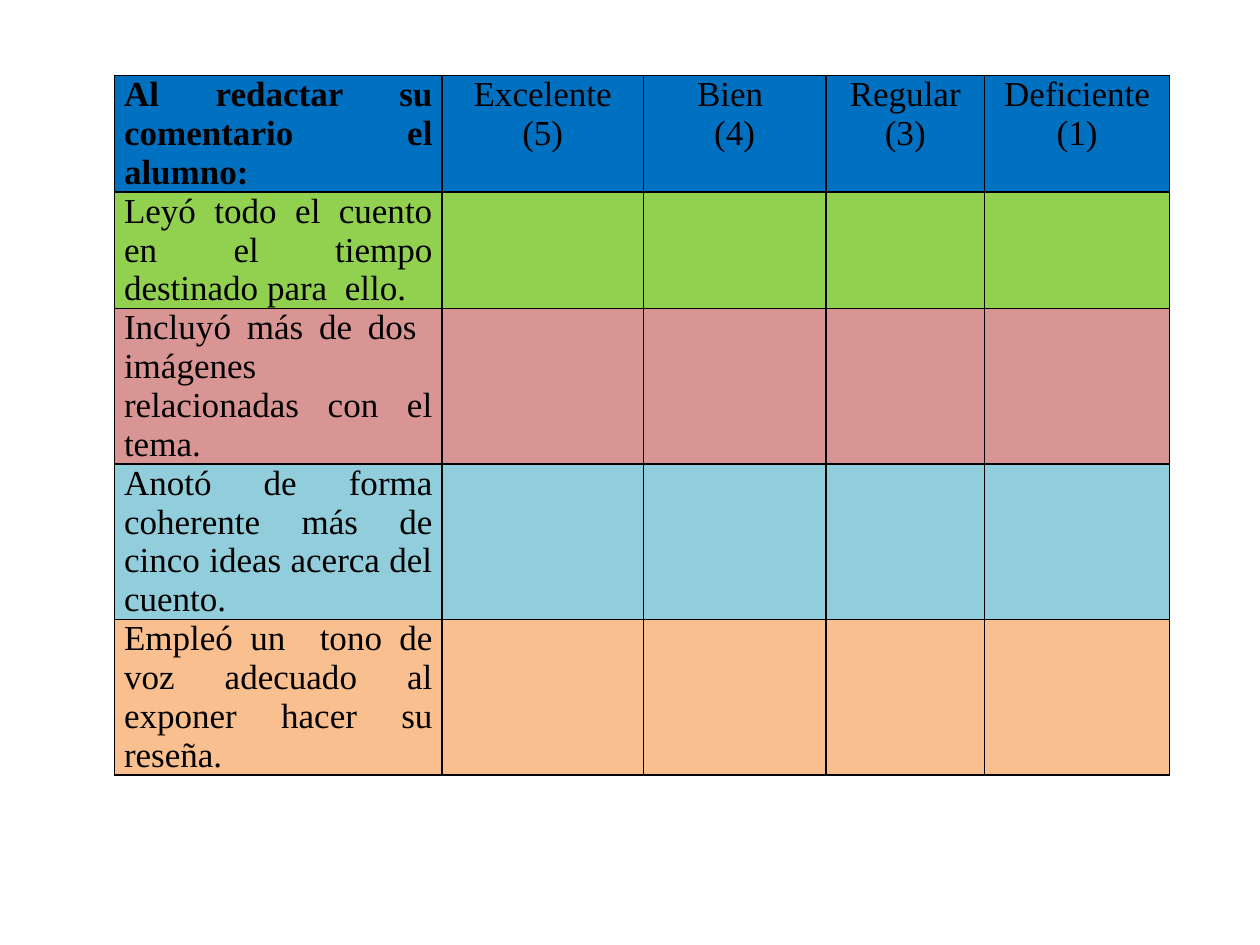
from lxml import etree
from pptx import Presentation
from pptx.dml.color import RGBColor
from pptx.enum.text import PP_ALIGN
from pptx.oxml.ns import qn
from pptx.util import Cm, Pt

CENTER, JUSTIFY = PP_ALIGN.CENTER, PP_ALIGN.JUSTIFY

# Content
HEADER = ["Al redactar su comentario el alumno:", "Excelente (5)",
          "Bien \n(4)", "Regular (3)", "Deficiente (1)"]
CRITERIA = [
    "Leyó todo el cuento en el tiempo destinado para  ello.",
    "Incluyó más de dos  imágenes  relacionadas con el tema.",
    "Anotó de forma coherente más de cinco ideas acerca del cuento.",
    "Empleó un  tono de voz adecuado al exponer hacer su reseña.",
]
ROWS = [HEADER] + [[text] + [""] * (len(HEADER) - 1) for text in CRITERIA]

# Style
COLORS = {"blue": "0070C0", "green": "92D050", "rose": "D99594",
          "aqua": "92CDDC", "orange": "FABF8F", "ink": "000000"}
ROW_FILLS = ["blue", "green", "rose", "aqua", "orange"]
FONT, FONT_SIZE = "Times New Roman", Pt(20)
COLUMN_WIDTHS = [6.6, 4.06, 3.68, 3.2, 3.73]
ROW_HEIGHTS = [2.35, 2.35, 3.13, 3.13, 3.13]
LEFT, TOP, SIDE_MARGIN = 2.31, 1.52, 0.19


def color(name):
    return RGBColor.from_string(COLORS[name])


def add_borders(cell):
    properties = cell._tc.get_or_add_tcPr()
    for side in ("a:lnL", "a:lnR", "a:lnT", "a:lnB"):
        line = etree.SubElement(properties, qn(side), w=str(Pt(1)))
        fill = etree.SubElement(line, qn("a:solidFill"))
        etree.SubElement(fill, qn("a:srgbClr"), val=COLORS["ink"])


def fill_cell(cell, text, fill, alignment, bold):
    cell.margin_left = cell.margin_right = Cm(SIDE_MARGIN)
    cell.margin_top = cell.margin_bottom = 0
    add_borders(cell)
    cell.fill.solid()
    cell.fill.fore_color.rgb = color(fill)
    cell.text_frame.text = text
    for para in cell.text_frame.paragraphs:
        para.alignment = alignment
        for span in para.runs:
            span.font.name = FONT
            span.font.size = FONT_SIZE
            span.font.bold = bold
            span.font.color.rgb = color("ink")


# Slide
deck = Presentation()
deck.slide_width, deck.slide_height = Cm(25.4), Cm(19.05)
page = deck.slides.add_slide(deck.slide_layouts[6])

# Rubric table
rubric = page.shapes.add_table(
    len(ROWS), len(HEADER), Cm(LEFT), Cm(TOP),
    Cm(sum(COLUMN_WIDTHS)), Cm(sum(ROW_HEIGHTS))).table
for column, width in zip(rubric.columns, COLUMN_WIDTHS):
    column.width = Cm(width)
for row, height in zip(rubric.rows, ROW_HEIGHTS):
    row.height = Cm(height)

for row_index, (texts, fill) in enumerate(zip(ROWS, ROW_FILLS)):
    for column_index, text in enumerate(texts):
        first = column_index == 0
        fill_cell(rubric.cell(row_index, column_index), text, fill,
                  JUSTIFY if first else CENTER, first and row_index == 0)

deck.save("out.pptx")
